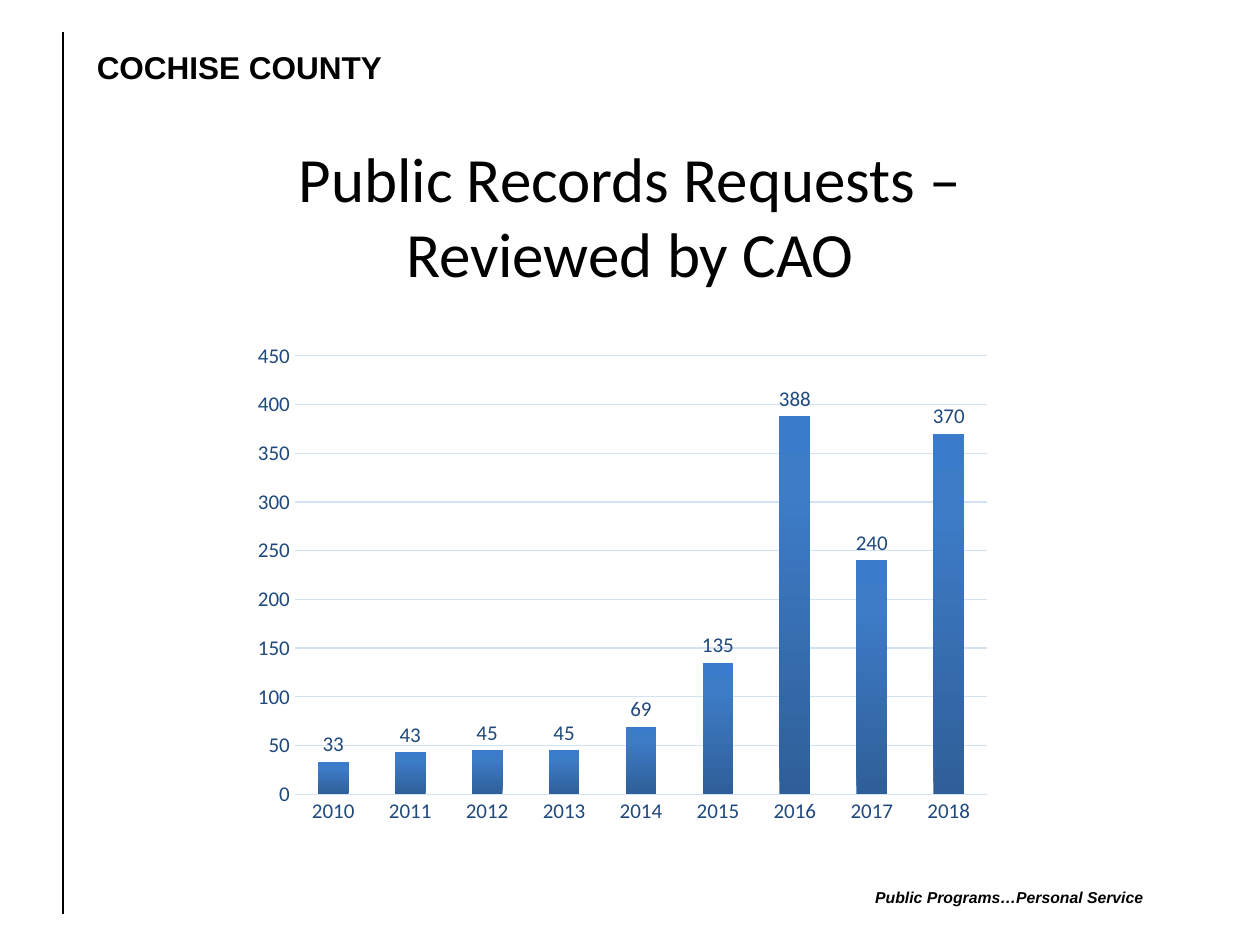
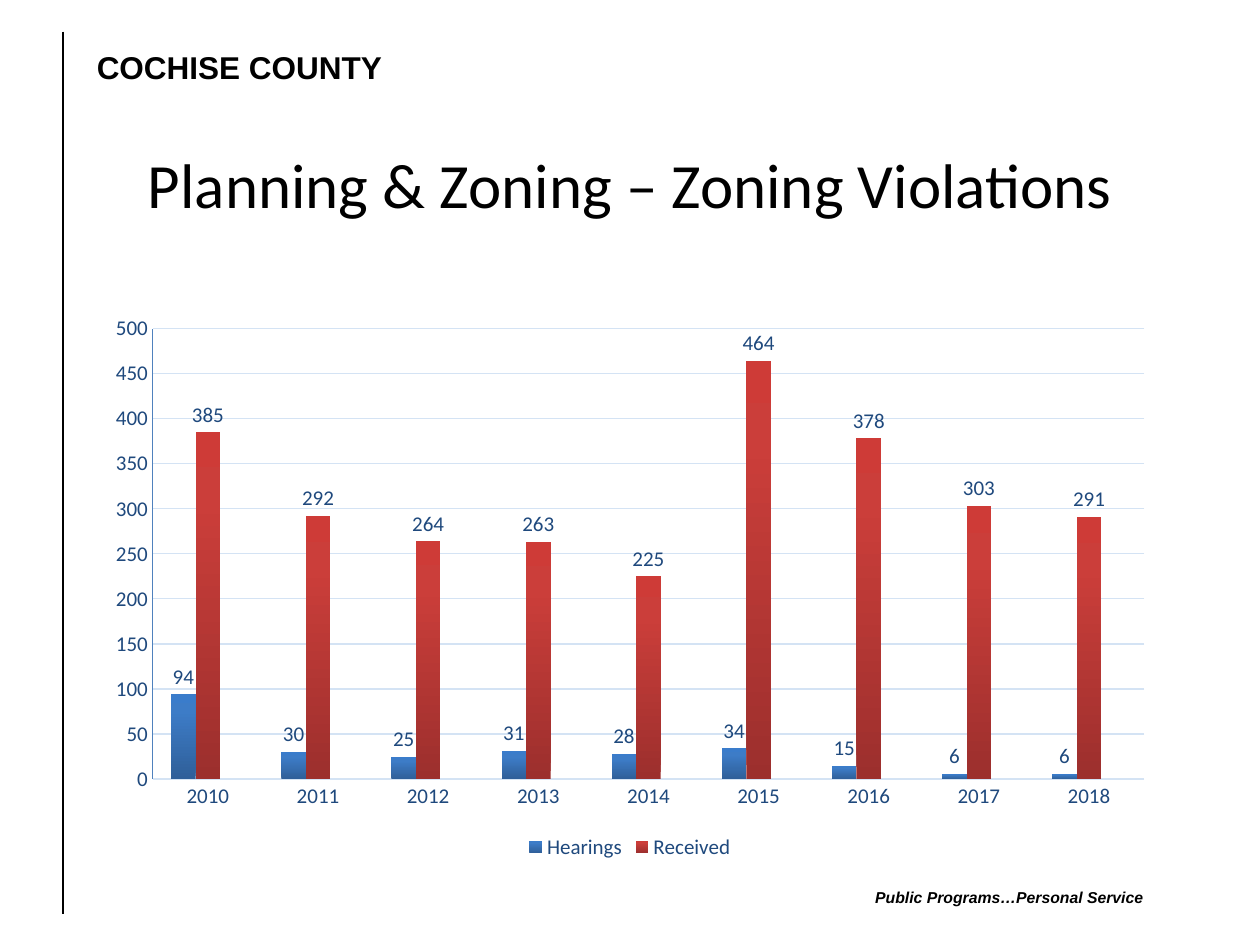
"""Build two Cochise County slides with yearly column charts."""
from dataclasses import dataclass

from pptx import Presentation
from pptx.chart.data import CategoryChartData
from pptx.dml.color import RGBColor
from pptx.enum.chart import XL_CHART_TYPE, XL_LABEL_POSITION, XL_LEGEND_POSITION, XL_TICK_MARK
from pptx.enum.shapes import MSO_CONNECTOR
from pptx.enum.text import MSO_ANCHOR, MSO_AUTO_SIZE, PP_ALIGN
from pptx.oxml import parse_xml
from pptx.oxml.ns import nsdecls
from pptx.util import Inches, Pt


@dataclass(frozen=True)
class Theme:
    ink: str = "000000"
    label: str = "1F497D"
    grid: str = "D4E3F4"
    axis: str = "4F81BD"
    blue: tuple = ("2F5F99", "3D7CC7", "3A7CCB")
    red: tuple = ("9C2F2D", "CB3E3A", "CE3B37")
    green: tuple = ("779737", "9BC348", "9DC746")
    brand_font: str = "Arial"
    body_font: str = "Calibri"
    title_size: int = 36
    brand_size: int = 18
    chart_size: int = 12
    motto_size: int = 9
    line_width: float = 0.75


theme = Theme()


def style_font(font, color, **values):
    for name, value in values.items():
        setattr(font, name, value)
    font.color.rgb = RGBColor.from_string(color)


def style_line(line, color):
    line.color.rgb = RGBColor.from_string(color)
    line.width = Pt(theme.line_width)


years = [str(year) for year in range(2010, 2019)]
slides = [
    {
        "title": "Public Records Requests –\nReviewed by CAO",
        "title_top": 1.08,
        "chart_area": (1.58, 2.5, 6.67, 4.44),
        "maximum": 450,
        "axis_color": None,
        "plot_area": {"x": 0.114, "y": 0.073, "w": 0.824, "h": 0.784},
        "legend": False,
        "series": [("Series 1", theme.blue, [33, 43, 45, 45, 69, 135, 388, 240, 370])],
    },
    {
        "title": "Planning & Zoning – Zoning Violations",
        "title_top": 0.83,
        "chart_area": (0.75, 2.42, 8.5, 4.44),
        "maximum": 500,
        "axis_color": theme.axis,
        "plot_area": None,
        "legend": True,
        "series": [
            ("Hearings", theme.blue, [94, 30, 25, 31, 28, 34, 15, 6, 6]),
            ("Received", theme.red, [385, 292, 264, 263, 225, 464, 378, 303, 291]),
            ("Series 3", theme.green, [None] * len(years)),
        ],
    },
]
brand_boxes = [
    ("COCHISE COUNTY", (0.67, 0.33, 5.33, 0.4), PP_ALIGN.LEFT, theme.brand_size, False),
    ("Public Programs…Personal Service", (5.92, 7, 3.25, 0.25), PP_ALIGN.RIGHT, theme.motto_size, True),
]
chart_font = {"name": theme.body_font, "size": Pt(theme.chart_size)}

deck = Presentation()
deck.slide_width, deck.slide_height = Inches(10), Inches(7.5)
layout = deck.slide_layouts.get_by_name("Title Only")
title_style = deck.slide_master.element.xpath("p:txStyles/p:titleStyle/a:lvl1pPr/a:defRPr")[0]
title_style.set("sz", str(theme.title_size * 100))
pages = [deck.slides.add_slide(layout) for slide in slides]

shared = []
for text, area, alignment, size, italic in brand_boxes:
    box = pages[0].shapes.add_textbox(*map(Inches, area))
    box.text_frame.word_wrap = True
    para = box.text_frame.paragraphs[0]
    para.alignment = alignment
    span = para.add_run()
    span.text = text
    style_font(span.font, theme.ink, name=theme.brand_font, size=Pt(size), bold=True, italic=italic)
    shared.append(box)

rule = pages[0].shapes.add_connector(
    MSO_CONNECTOR.STRAIGHT, Inches(0.5), Inches(0.25), Inches(0.5), Inches(7.25)
)
style_line(rule.line, theme.ink)
rule.element.spPr.append(parse_xml(f"<a:effectLst {nsdecls('a')}/>"))
shared.append(rule)
for shape in shared:
    layout.shapes.element.append(shape.element)

for page, slide in zip(pages, slides):
    title = page.shapes.title
    title.left, title.top = Inches(0.5), Inches(slide["title_top"])
    title.width, title.height = Inches(9), Inches(1.25)
    title.text_frame.auto_size = MSO_AUTO_SIZE.NONE
    title.text_frame.vertical_anchor = MSO_ANCHOR.MIDDLE
    para = title.text_frame.paragraphs[0]
    para.text = slide["title"]
    para.alignment = PP_ALIGN.CENTER
    for span in para.runs:
        style_font(span.font, theme.ink, name=theme.body_font, size=Pt(theme.title_size))

    data = CategoryChartData()
    data.categories = years
    for name, colors, values in slide["series"]:
        data.add_series(name, values)
    frame = page.shapes.add_chart(
        XL_CHART_TYPE.COLUMN_CLUSTERED, *map(Inches, slide["chart_area"]), data
    )
    chart = frame.chart
    chart.has_title = False
    style_font(chart.font, theme.label, **chart_font)
    plot = chart.plots[0]
    plot.gap_width, plot.overlap, plot.vary_by_categories = 150, 0, False

    for axis, color in ((chart.category_axis, theme.grid), (chart.value_axis, slide["axis_color"])):
        axis.major_tick_mark = axis.minor_tick_mark = XL_TICK_MARK.NONE
        style_font(axis.tick_labels.font, theme.label, **chart_font)
        if color:
            style_line(axis.format.line, color)
        else:
            axis.format.line.fill.background()
    scale = chart.value_axis
    scale.minimum_scale, scale.maximum_scale, scale.major_unit = 0, slide["maximum"], 50
    scale.has_major_gridlines = True
    style_line(scale.major_gridlines.format.line, theme.grid)

    for series, (name, colors, values) in zip(plot.series, slide["series"]):
        series.invert_if_negative = False
        stops = "".join(
            f'<a:gs pos="{position}"><a:srgbClr val="{color}"/></a:gs>'
            for position, color in zip((0, 80000, 100000), colors)
        )
        series.format.fill.background()
        empty_fill = series.format.element.xpath("c:spPr/a:noFill")[0]
        empty_fill.getparent().replace(empty_fill, parse_xml(
            f'<a:gradFill {nsdecls("a")} rotWithShape="1"><a:gsLst>{stops}</a:gsLst>'
            '<a:lin ang="16200000" scaled="0"/></a:gradFill>'
        ))
        if any(values):
            labels = series.data_labels
            labels.show_value = True
            labels.position = XL_LABEL_POSITION.OUTSIDE_END
            style_font(labels.font, theme.label, **chart_font)

    chart.has_legend = slide["legend"]
    if chart.has_legend:
        legend = chart.legend
        legend.position = XL_LEGEND_POSITION.BOTTOM
        legend.include_in_layout = False
        style_font(legend.font, theme.label, **chart_font)
        legend_position = chart.element.xpath(".//c:legendPos")[0]
        legend_position.addnext(parse_xml(
            f'<c:legendEntry {nsdecls("c")}><c:idx val="2"/><c:delete val="1"/></c:legendEntry>'
        ))

    if slide["plot_area"]:
        places = "".join(f'<c:{side} val="{value}"/>' for side, value in slide["plot_area"].items())
        plot_area = chart.element.xpath(".//c:plotArea")[0]
        for old_layout in plot_area.xpath("c:layout"):
            plot_area.remove(old_layout)
        plot_area.insert(0, parse_xml(
            f'<c:layout {nsdecls("c")}><c:manualLayout><c:layoutTarget val="inner"/>'
            f'<c:xMode val="edge"/><c:yMode val="edge"/>{places}</c:manualLayout></c:layout>'
        ))

deck.save("out.pptx")
